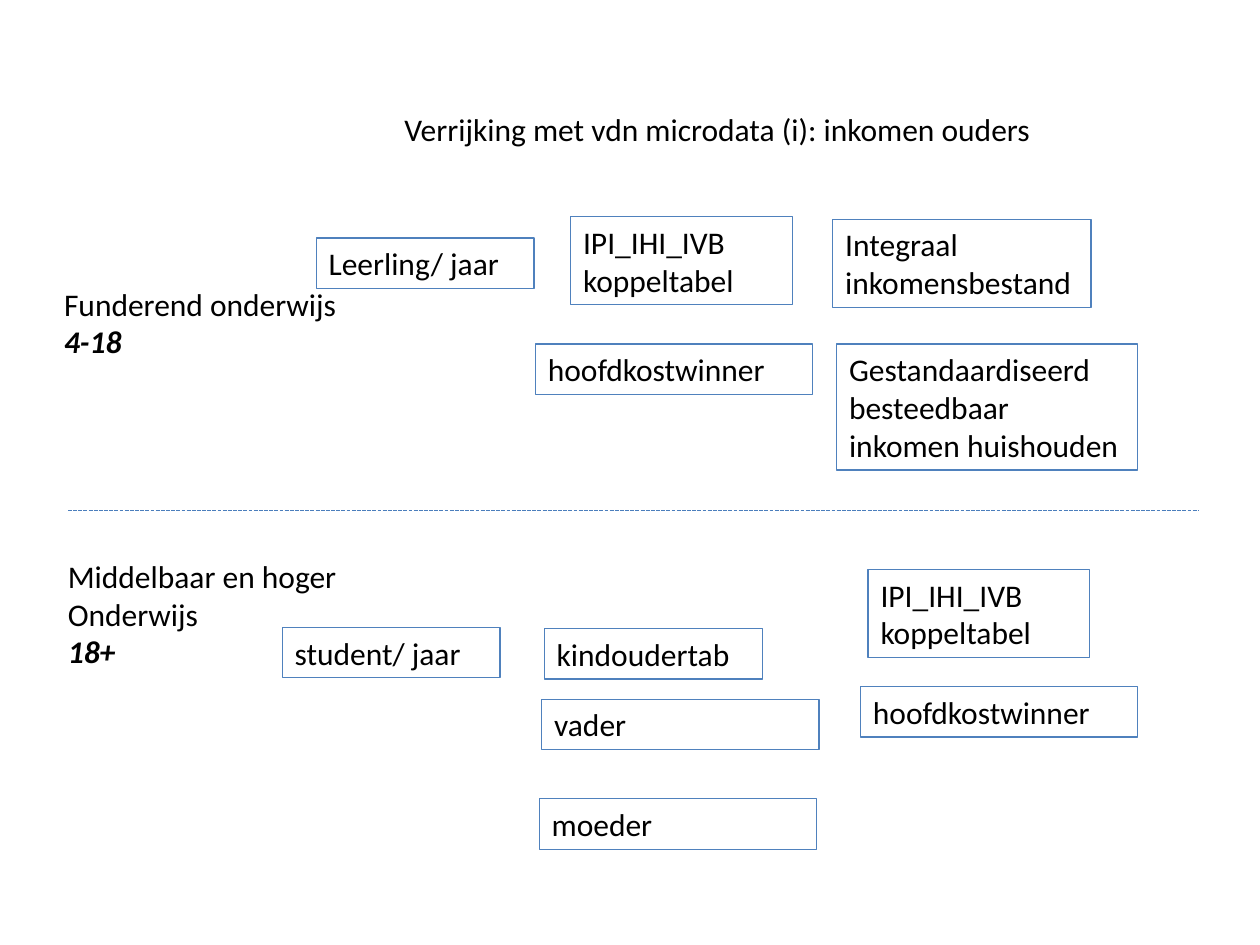
from dataclasses import dataclass

from lxml import etree
from pptx import Presentation
from pptx.dml.color import RGBColor
from pptx.enum import dml, shapes, text
from pptx.oxml import ns
from pptx.util import Inches, Pt


@dataclass(frozen=True)
class Theme:
    font: str = "Calibri"
    size: int = 18
    ink: str = "000000"
    edge: str = "4F81BD"
    rule: str = "4B7EBC"
    line: float = 0.75


THEME = Theme()

# Box widths
PERSON, LINK, EARNER = 1.73, 1.76, 2.2

# Left, top, width, rows of text, wording
SCHOOL = [
    (2.51, 1.89, PERSON, 1, "Leerling/ jaar"),
    (4.53, 1.72, LINK, 2, "IPI_IHI_IVB\nkoppeltabel"),
    (4.25, 2.73, EARNER, 1, "hoofdkostwinner"),
    (6.61, 1.74, 2.05, 2, "Integraal inkomensbestand"),
    (6.64, 2.73, 2.39, 3, "Gestandaardiseerd besteedbaar inkomen huishouden"),
]
COLLEGE = [
    (2.24, 4.98, PERSON, 1, "student/ jaar"),
    (4.32, 4.99, PERSON, 1, "kindoudertab"),
    (4.3, 5.55, EARNER, 1, "vader"),
    (4.28, 6.34, EARNER, 1, "moeder"),
    (6.89, 4.52, LINK, 2, "IPI_IHI_IVB\nkoppeltabel"),
    (6.83, 5.45, EARNER, 1, "hoofdkostwinner"),
]


def height(rows):
    return Inches(0.1 + 0.3 * rows)


def write(shape, words, wrap):
    frame = shape.text_frame
    frame.text = words
    frame.word_wrap = wrap
    frame.auto_size = text.MSO_AUTO_SIZE.SHAPE_TO_FIT_TEXT
    frame.vertical_anchor = text.MSO_ANCHOR.TOP
    for para in frame.paragraphs:
        para.alignment = text.PP_ALIGN.LEFT
        para.font.name = THEME.font
        para.font.size = Pt(THEME.size)
        para.font.color.rgb = RGBColor.from_string(THEME.ink)


def add_title(slide, words):
    title = slide.shapes.title
    title.left, title.top = Inches(3.11), Inches(0.82)
    title.width, title.height = Inches(5.19), height(1)
    write(title, words, False)


def add_box(slide, left, top, width, rows, words):
    box = slide.shapes.add_shape(
        shapes.MSO_SHAPE.RECTANGLE,
        Inches(left), Inches(top), Inches(width), height(rows))
    box.shadow.inherit = False
    box.fill.background()
    box.line.color.rgb = RGBColor.from_string(THEME.edge)
    box.line.width = Pt(THEME.line)
    write(box, words, True)


def add_label(slide, left, top, width, name, age):
    """Name a school level, with its age range in bold italics below."""
    words = f"{name}\n{age}"
    rows = words.count("\n") + 1
    label = slide.shapes.add_textbox(
        Inches(left), Inches(top), Inches(width), height(rows))
    write(label, words, False)
    font = label.text_frame.paragraphs[-1].font
    font.bold = font.italic = True


def add_rule(slide, left, right, y):
    rule = slide.shapes.add_connector(
        shapes.MSO_CONNECTOR.STRAIGHT,
        Inches(left), Inches(y), Inches(right), Inches(y))
    rule.line.color.rgb = RGBColor.from_string(THEME.rule)
    rule.line.width = Pt(THEME.line)
    rule.line.dash_style = dml.MSO_LINE.SQUARE_DOT
    etree.SubElement(rule._element.spPr, ns.qn("a:effectLst"))


def main():
    deck = Presentation()
    deck.slide_width, deck.slide_height = Inches(10), Inches(7.5)
    slide = deck.slides.add_slide(deck.slide_layouts.get_by_name("Title Only"))

    add_title(slide, "Verrijking met vdn microdata (i): inkomen ouders")
    for box in SCHOOL:
        add_box(slide, *box)
    add_label(slide, 0.41, 2.21, 2.39, "Funderend onderwijs", "4-18")
    add_label(slide, 0.44, 4.37, 2.36, "Middelbaar en hoger\nOnderwijs", "18+")
    add_rule(slide, 0.54, 9.52, 4.05)
    for box in COLLEGE:
        add_box(slide, *box)

    deck.save("out.pptx")


if __name__ == "__main__":
    main()
